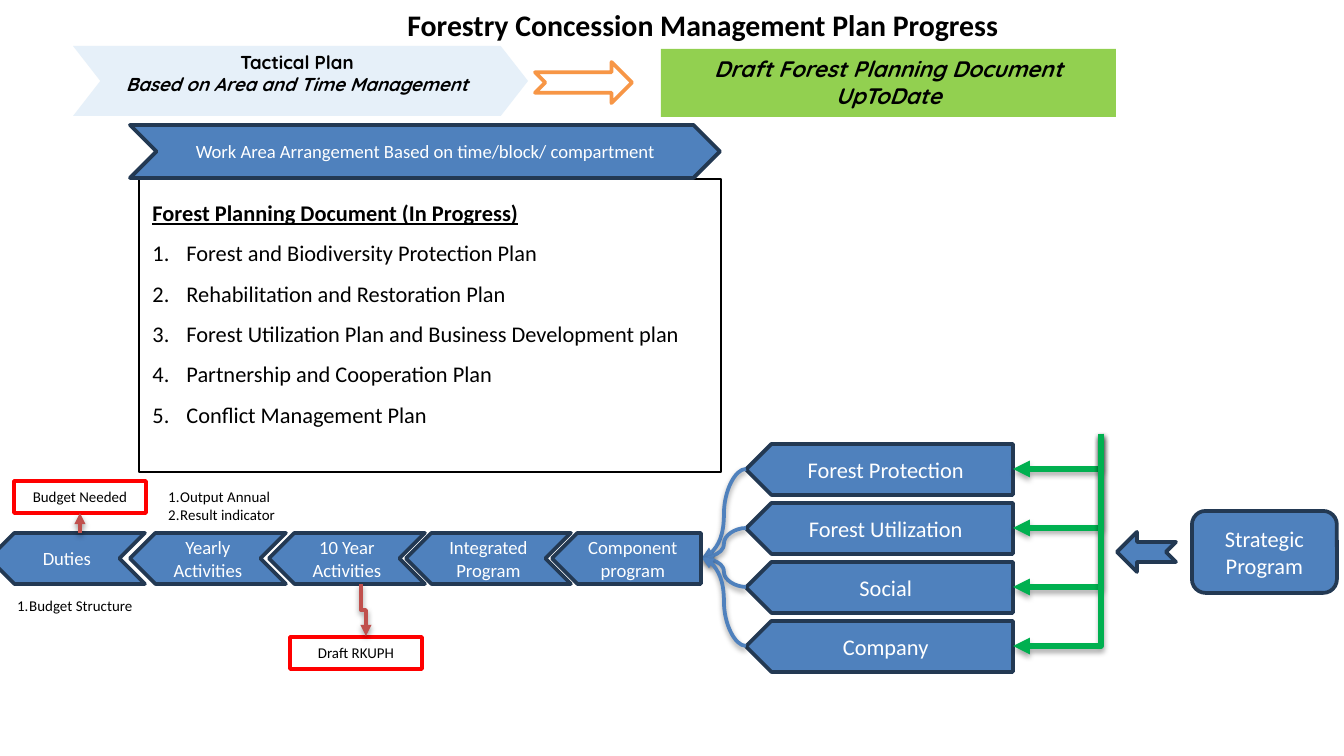
from lxml import etree
from pptx import Presentation
from pptx.dml.color import RGBColor
from pptx.enum.shapes import MSO_CONNECTOR as Link, MSO_SHAPE as Preset
from pptx.enum.text import MSO_ANCHOR as Anchor, MSO_AUTO_SIZE as AutoSize, PP_ALIGN as Align
from pptx.oxml.ns import qn
from pptx.util import Pt

EMU_PER_PX = 914400 / 134.4
BLUE, NAVY, GREEN, RED, BRICK = "4F81BD", "233953", "00B050", "FF0000", "C0504D"
BLACK, WHITE = "000000", "FFFFFF"


def px(value):
    return round(value * EMU_PER_PX)


def rgb(value):
    return RGBColor.from_string(value)


def set_values(target, values):
    for name, value in values.items():
        setattr(target, name, value)


def add_element(parent, tag, **attributes):
    return etree.SubElement(parent, qn(tag), {key: str(value) for key, value in attributes.items()})


def place(shape, box):
    set_values(shape, dict(zip(("left", "top", "width", "height"), map(px, box))))


def set_bullet(paragraph, indent):
    properties = paragraph._p.get_or_add_pPr()
    properties.set("marL", str(px(indent)))
    properties.set("indent", str(-px(indent)))
    if indent:
        add_element(properties, "a:buFont", typeface="+mj-lt")
        add_element(properties, "a:buAutoNum", type="arabicPeriod")
    else:
        add_element(properties, "a:buNone")


def write_text(shape, lines, size, color=BLACK, anchor=Anchor.TOP, align=Align.CENTER,
               wrap=True, indents=None, spacing=None, name="Calibri", **styles):
    frame = shape.text_frame
    set_values(frame, {"word_wrap": wrap, "auto_size": AutoSize.NONE, "vertical_anchor": anchor})
    frame.text = "\n".join(lines)
    for index, paragraph in enumerate(frame.paragraphs):
        set_values(paragraph, {"alignment": align, "space_before": Pt(0)})
        if spacing:
            paragraph.line_spacing = spacing
        if indents:
            set_bullet(paragraph, indents[index])
        set_values(paragraph.font, {"size": Pt(size), "name": name, **styles})
        paragraph.font.color.rgb = rgb(color)
    return frame.paragraphs


def add_block(slide, preset, box, fill=None, line=None, flip=False):
    shape = slide.shapes.add_shape(preset, *map(px, box))
    shape.shadow.inherit = False
    if fill:
        shape.fill.solid()
        shape.fill.fore_color.rgb = rgb(fill)
    else:
        shape.fill.background()
    if line:
        shape.line.color.rgb = rgb(line)
        shape.line.width = Pt(2)
    else:
        shape.line.fill.background()
    if flip:
        shape._element.spPr.find(qn("a:xfrm")).set("flipH", "1")
    return shape


def add_step(slide, preset, box, text, size, flip=True):
    shape = add_block(slide, preset, box, BLUE, NAVY, flip)
    write_text(shape, [text], size, WHITE, Anchor.MIDDLE)


def add_label(slide, box, text):
    shape = add_block(slide, Preset.RECTANGLE, box, line=RED)
    write_text(shape, [text], 8)
    return shape


def add_note(slide, box, lines):
    shape = slide.shapes.add_textbox(*map(px, box))
    write_text(shape, lines, 8, align=Align.LEFT, indents=[12] * len(lines))


def add_arrow(slide, kind, start, end, color, width=2, alpha=38):
    connector = slide.shapes.add_connector(kind, *map(px, (*start, *end)))
    connector.line.color.rgb = rgb(color)
    connector.line.width = Pt(width)
    add_element(connector.line._get_or_add_ln(), "a:tailEnd", type="triangle")
    effects = add_element(connector._element.spPr, "a:effectLst")
    shadow = add_element(effects, "a:outerShdw", blurRad=Pt(3.1), dist=Pt(1.6),
                         dir=5400000, rotWithShape=0)
    shadow_color = add_element(shadow, "a:srgbClr", val=BLACK)
    add_element(shadow_color, "a:alpha", val=alpha * 1000)
    return connector


def add_downward_elbow(slide, start, end, color, preset, width=2, alpha=38):
    middle_x, middle_y = (start[0] + end[0]) / 2, (start[1] + end[1]) / 2
    half_run, half_rise = (end[1] - start[1]) / 2, (end[0] - start[0]) / 2
    connector = add_arrow(slide, Link.ELBOW, (middle_x - half_run, middle_y + half_rise),
                          (middle_x + half_run, middle_y - half_rise), color, width, alpha)
    properties = connector._element.spPr
    properties.find(qn("a:xfrm")).set("rot", "5400000")
    properties.find(qn("a:prstGeom")).set("prst", preset)


def add_header(slide):
    title = slide.shapes.title
    place(title, (394, 0, 706, 50))
    write_text(title, ["Forestry Concession Management Plan Progress"], 16,
               align=Align.LEFT, wrap=False, bold=True)
    tactical = add_block(slide, Preset.CHEVRON, (73, 46, 455, 70), "DEEBF7")
    tactical.adjustments[0] = 0.39
    fill_color = tactical._element.spPr.find(qn("a:solidFill"))[0]
    add_element(fill_color, "a:alpha", val=75000)
    caption = slide.shapes.add_textbox(*map(px, (101, 44, 392, 59)))
    paragraphs = write_text(caption, ["Tactical Plan", "Based on Area and Time Management"], 10,
                            name="Quicksand", bold=True)
    paragraphs[1].font.italic = True
    add_block(slide, Preset.NOTCHED_RIGHT_ARROW, (535, 62, 97, 41), WHITE, "F79646")
    draft = add_block(slide, Preset.RECTANGLE, (661, 49, 455, 68), "92D050")
    write_text(draft, ["Draft Forest Planning Document UpToDate"], 12,
               name="Quicksand", bold=True, italic=True)
    add_step(slide, Preset.CHEVRON, (130, 125, 590, 53),
             "Work Area Arrangement Based on time/block/ compartment", 10, flip=False)


def add_planning_list(slide):
    body = slide.placeholders[1]
    place(body, (139, 179, 582, 293))
    body.line.color.rgb = rgb(BLACK)
    body.line.width = Pt(0.75)
    lines = ["Forest Planning Document (In Progress)",
             "Forest and Biodiversity Protection Plan",
             "Rehabilitation and Restoration Plan",
             "Forest Utilization Plan and Business Development plan",
             "Partnership and Cooperation Plan",
             "Conflict Management Plan"]
    paragraphs = write_text(body, lines, 12, align=Align.LEFT,
                            indents=[0] + [34] * 5, spacing=1.5)
    set_values(paragraphs[0].font, {"bold": True, "underline": True})


def add_programs(slide):
    programs = ["Forest Protection", "Forest Utilization", "Social", "Company"]
    for index, program in enumerate(programs):
        top = 444 + 59 * index
        middle = top + 25
        add_step(slide, Preset.PENTAGON, (746, top, 267, 51), program, 12)
        add_downward_elbow(slide, (1101, 434), (1013, middle), GREEN,
                           "bentConnector2", width=3, alpha=35)
        add_arrow(slide, Link.CURVE, (746, middle), (702, 558), BLUE)
    add_step(slide, Preset.ROUNDED_RECTANGLE, (1192, 511, 145, 82),
             "Strategic Program", 12, flip=False)
    add_block(slide, Preset.NOTCHED_RIGHT_ARROW, (1117, 532, 59, 40), BLUE, NAVY, flip=True)


def add_steps(slide):
    steps = [(Preset.PENTAGON, 552, 149, "Component program"),
             (Preset.CHEVRON, 406, 165, "Integrated Program"),
             (Preset.CHEVRON, 269, 156, "10 Year Activities"),
             (Preset.CHEVRON, 130, 156, "Yearly Activities"),
             (Preset.CHEVRON, -11, 156, "Duties")]
    for preset, left, width, text in steps:
        add_step(slide, preset, (left, 533, width, 51), text, 10)
    add_note(slide, (155, 481, 175, 50), ["Output Annual", "Result indicator"])
    add_note(slide, (4, 590, 165, 32), ["Budget Structure"])
    add_label(slide, (290, 637, 132, 32), "Draft RKUPH")
    add_downward_elbow(slide, (361, 584), (366, 636), BRICK, "bentConnector3")
    budget = add_label(slide, (14, 481, 132, 32), "Budget Needed")
    arrow = add_arrow(slide, Link.STRAIGHT, (80, 533), (80, 513), BRICK)
    arrow.end_connect(budget, 2)


def main():
    presentation = Presentation()
    presentation.slide_width, presentation.slide_height = px(1344), px(756)
    slide = presentation.slides.add_slide(presentation.slide_layouts[1])
    add_header(slide)
    add_planning_list(slide)
    add_programs(slide)
    add_steps(slide)
    presentation.save("out.pptx")


if __name__ == "__main__":
    main()
